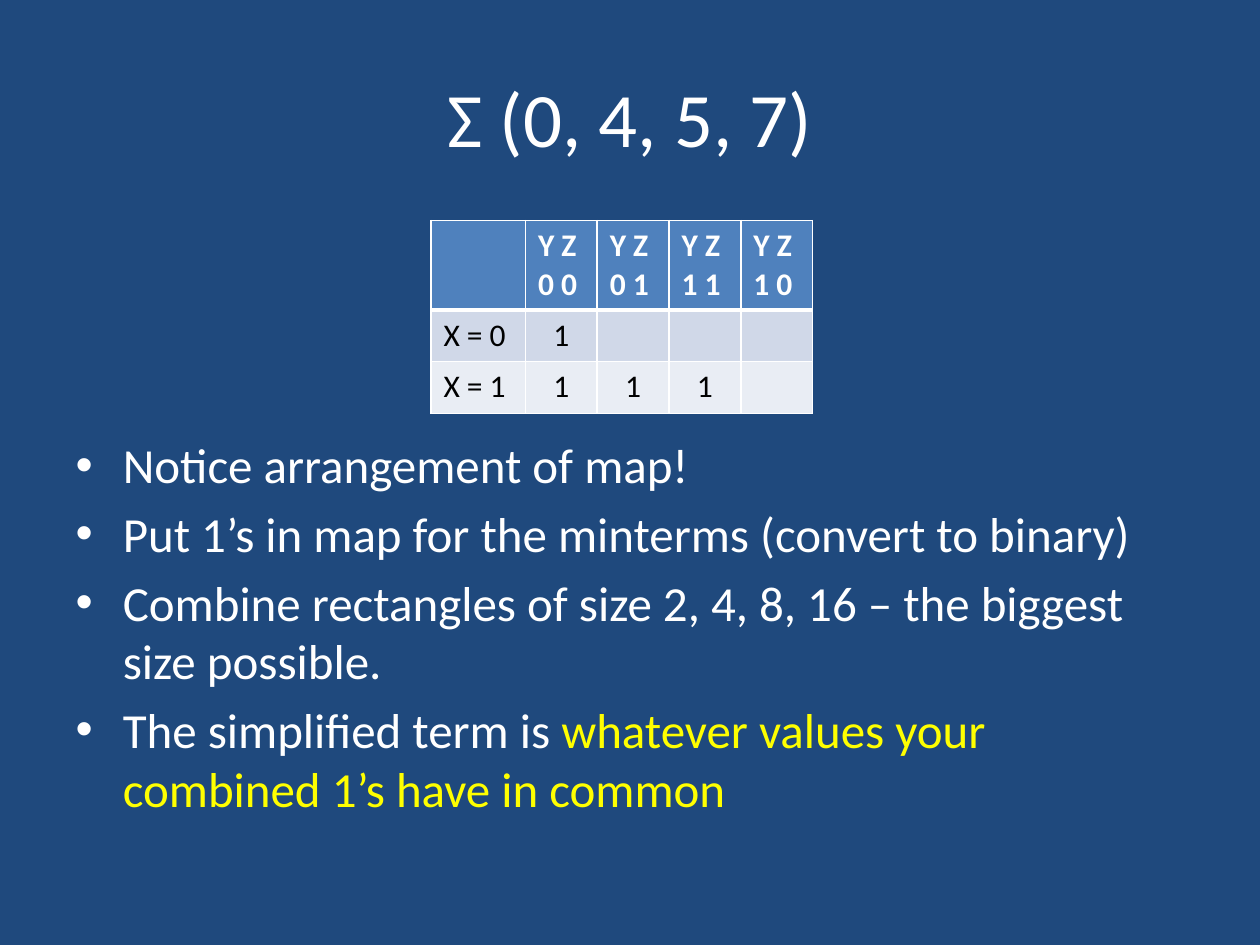
from lxml import etree
from pptx import Presentation
from pptx.dml.color import RGBColor
from pptx.enum.text import MSO_ANCHOR, MSO_AUTO_SIZE, PP_ALIGN
from pptx.oxml.ns import qn
from pptx.util import Inches, Pt

NAVY = RGBColor(0x1F, 0x49, 0x7D)
WHITE = RGBColor(0xFF, 0xFF, 0xFF)
BLACK = RGBColor(0x00, 0x00, 0x00)
YELLOW = RGBColor(0xFF, 0xFF, 0x00)
HEADER_BLUE = RGBColor(0x4F, 0x81, 0xBD)
BAND_DARK = RGBColor(0xD0, 0xD8, 0xE8)
BAND_LIGHT = RGBColor(0xE9, 0xED, 0xF4)
FONT = "Calibri"

MAP_ROWS = [
    ["", "Y Z\n0 0", "Y Z\n0 1", "Y Z\n1 1", "Y Z\n1 0"],
    ["X = 0", "1", "", "", ""],
    ["X = 1", "1", "1", "1", ""],
]
ROW_FILLS = [HEADER_BLUE, BAND_DARK, BAND_LIGHT]
ROW_HEIGHTS = [0.7, 0.41, 0.41]
COLUMN_WIDTHS = [0.75] + [0.57] * 4

# Each bullet is a list of (text, colour) runs
BULLETS = [
    [("Notice arrangement of map!", WHITE)],
    [("Put 1’s in map for the minterms (convert to binary)", WHITE)],
    [("Combine rectangles of size 2, 4, 8, 16 – the biggest size possible.", WHITE)],
    [("The simplified term is ", WHITE),
     ("whatever values your combined 1’s have in common", YELLOW)],
]


def place(shape, box):
    shape.left, shape.top, shape.width, shape.height = map(Inches, box)


def format_font(font, size, color, bold=False):
    font.name = FONT
    font.size = Pt(size)
    font.bold = bold
    font.color.rgb = color


def set_borders(cell, bottom_width):
    """Draw white borders; they must come before the cell's fill."""
    properties = cell._tc.get_or_add_tcPr()
    widths = {"a:lnL": 1, "a:lnR": 1, "a:lnT": 1, "a:lnB": bottom_width}
    for index, (tag, width) in enumerate(widths.items()):
        line = etree.Element(qn(tag), w=str(Pt(width)))
        fill = etree.SubElement(line, qn("a:solidFill"))
        etree.SubElement(fill, qn("a:srgbClr"), val=str(WHITE))
        properties.insert(index, line)


def add_title(slide, box):
    title = slide.shapes.title
    place(title, box)
    title.text_frame.text = "Σ (0, 4, 5, 7)"
    title.text_frame.vertical_anchor = MSO_ANCHOR.MIDDLE
    paragraph = title.text_frame.paragraphs[0]
    paragraph.alignment = PP_ALIGN.CENTER
    format_font(paragraph.runs[0].font, 44, WHITE)


def add_bullets(slide, box, map_space):
    """Fill the body, leaving map_space inches at its top for the map."""
    body = slide.placeholders[1]
    place(body, box)
    text_frame = body.text_frame
    text_frame.auto_size = MSO_AUTO_SIZE.NONE
    text_frame.margin_top = Inches(map_space)
    for index, runs in enumerate(BULLETS):
        paragraph = text_frame.add_paragraph() if index else text_frame.paragraphs[0]
        paragraph.space_before = Pt(5.6 if index else 0)
        for text, color in runs:
            run = paragraph.add_run()
            run.text = text
            format_font(run.font, 28, color)
        # The bullet takes the colour and size of the text
        format_font(paragraph.font, 28, WHITE)


def add_karnaugh_map(slide, box):
    frame = slide.shapes.add_table(
        len(MAP_ROWS), len(COLUMN_WIDTHS), *map(Inches, box))
    table = frame.table
    for column, width in zip(table.columns, COLUMN_WIDTHS):
        column.width = Inches(width)
    for row, height in zip(table.rows, ROW_HEIGHTS):
        row.height = Inches(height)

    for row_index, texts in enumerate(MAP_ROWS):
        is_header = row_index == 0
        for column_index, text in enumerate(texts):
            cell = table.cell(row_index, column_index)
            cell.fill.solid()
            cell.fill.fore_color.rgb = ROW_FILLS[row_index]
            set_borders(cell, 3 if is_header else 1)
            cell.text_frame.text = text
            for paragraph in cell.text_frame.paragraphs:
                if not is_header and column_index > 0:
                    paragraph.alignment = PP_ALIGN.CENTER
                for run in paragraph.runs:
                    format_font(run.font, 18, WHITE if is_header else BLACK, is_header)


def main():
    presentation = Presentation()
    presentation.slide_width = Inches(10)
    presentation.slide_height = Inches(7.5)
    slide = presentation.slides.add_slide(presentation.slide_layouts[1])
    slide.background.fill.solid()
    slide.background.fill.fore_color.rgb = NAVY

    add_title(slide, (0.5, 0.3, 9, 1.25))
    add_bullets(slide, (0.5, 1.75, 9, 4.95), map_space=1.7)
    add_karnaugh_map(slide, (3.42, 1.75, sum(COLUMN_WIDTHS), sum(ROW_HEIGHTS)))
    presentation.save("out.pptx")


if __name__ == "__main__":
    main()
